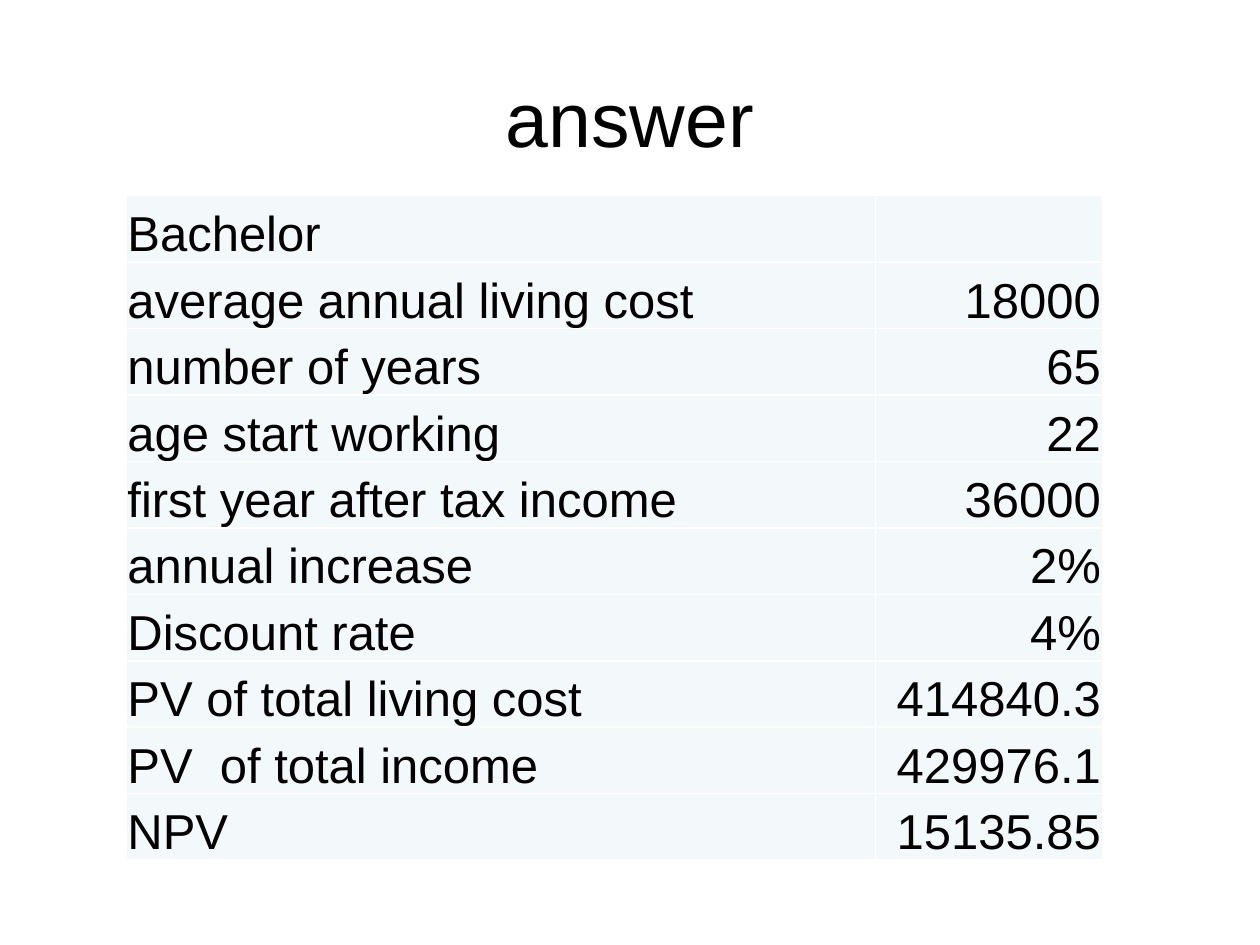
"""Build the answer slide: a bachelor's living cost, income and net present value."""
from dataclasses import dataclass
from typing import NamedTuple

from lxml.etree import SubElement
from pptx import Presentation
from pptx.dml.color import RGBColor
from pptx.enum.text import MSO_ANCHOR, PP_ALIGN
from pptx.oxml.ns import qn
from pptx.util import Cm, Pt


@dataclass(frozen=True)
class Theme:
    font: str = "Arial"
    ink: str = "000000"
    cell_fill: str = "F3F9FA"
    border: str = "FFFFFF"
    border_width: int = Pt(1)
    title_size: int = Pt(44)
    body_size: int = Pt(28)


class Entry(NamedTuple):
    label: str
    value: str = ""


THEME = Theme()
ENTRIES = (
    Entry("Bachelor"),
    Entry("average annual living cost", "18000"),
    Entry("number of years", "65"),
    Entry("age start working", "22"),
    Entry("first year after tax income", "36000"),
    Entry("annual increase", "2%"),
    Entry("Discount rate", "4%"),
    Entry("PV of total living cost", "414840.3"),
    Entry("PV  of total income", "429976.1"),
    Entry("NPV", "15135.85"),
)
COLUMN_WIDTHS = (Cm(15.11), Cm(4.57))
COLUMN_ALIGNMENTS = (PP_ALIGN.LEFT, PP_ALIGN.RIGHT)
ROW_HEIGHT = Cm(1.34)
CELL_FORMAT = {
    "margin_left": Cm(0.03),
    "margin_right": Cm(0.03),
    "margin_top": Cm(0.03),
    "margin_bottom": Cm(0),
    "vertical_anchor": MSO_ANCHOR.BOTTOM,
}
TITLE_FORMAT = {"word_wrap": True, "vertical_anchor": MSO_ANCHOR.MIDDLE}


def apply_format(target, values: dict) -> None:
    for name, value in values.items():
        setattr(target, name, value)


def write(text_frame, wording: str, size: int, alignment: PP_ALIGN) -> None:
    paragraph = text_frame.paragraphs[0]
    paragraph.alignment = alignment
    if wording:
        paragraph.add_run().text = wording
    apply_format(paragraph.font, {"name": THEME.font, "size": size})
    for run in paragraph.runs:
        apply_format(run.font, {"name": THEME.font, "size": size})
        run.font.color.rgb = RGBColor.from_string(THEME.ink)


def draw_borders(cell) -> None:
    properties = cell._tc.get_or_add_tcPr()
    for side in ("a:lnL", "a:lnR", "a:lnT", "a:lnB"):
        line = SubElement(properties, qn(side), w=str(THEME.border_width))
        SubElement(SubElement(line, qn("a:solidFill")), qn("a:srgbClr"), val=THEME.border)


def draw_cell(cell, wording: str, alignment: PP_ALIGN) -> None:
    apply_format(cell, CELL_FORMAT)
    draw_borders(cell)
    cell.fill.solid()
    cell.fill.fore_color.rgb = RGBColor.from_string(THEME.cell_fill)
    write(cell.text_frame, wording, THEME.body_size, alignment)


def draw_title(slide, wording: str) -> None:
    title = slide.shapes.add_textbox(Cm(1.27), Cm(0.76), Cm(22.86), Cm(3.18)).text_frame
    apply_format(title, TITLE_FORMAT)
    write(title, wording, THEME.title_size, PP_ALIGN.CENTER)


def draw_entries(slide, entries: tuple[Entry, ...]) -> None:
    table = slide.shapes.add_table(
        len(entries), len(COLUMN_WIDTHS), Cm(2.54), Cm(3.94),
        sum(COLUMN_WIDTHS), ROW_HEIGHT * len(entries),
    ).table
    apply_format(table, {"first_row": False, "horz_banding": False})
    for column, width in zip(table.columns, COLUMN_WIDTHS):
        column.width = width
    for row, entry in zip(table.rows, entries):
        row.height = ROW_HEIGHT
        for cell, wording, alignment in zip(row.cells, entry, COLUMN_ALIGNMENTS):
            draw_cell(cell, wording, alignment)


def main() -> None:
    presentation = Presentation()
    apply_format(presentation, {"slide_width": Cm(25.4), "slide_height": Cm(19.05)})
    slide = presentation.slides.add_slide(presentation.slide_layouts[6])
    draw_title(slide, "answer")
    draw_entries(slide, ENTRIES)
    presentation.save("out.pptx")


if __name__ == "__main__":
    main()
